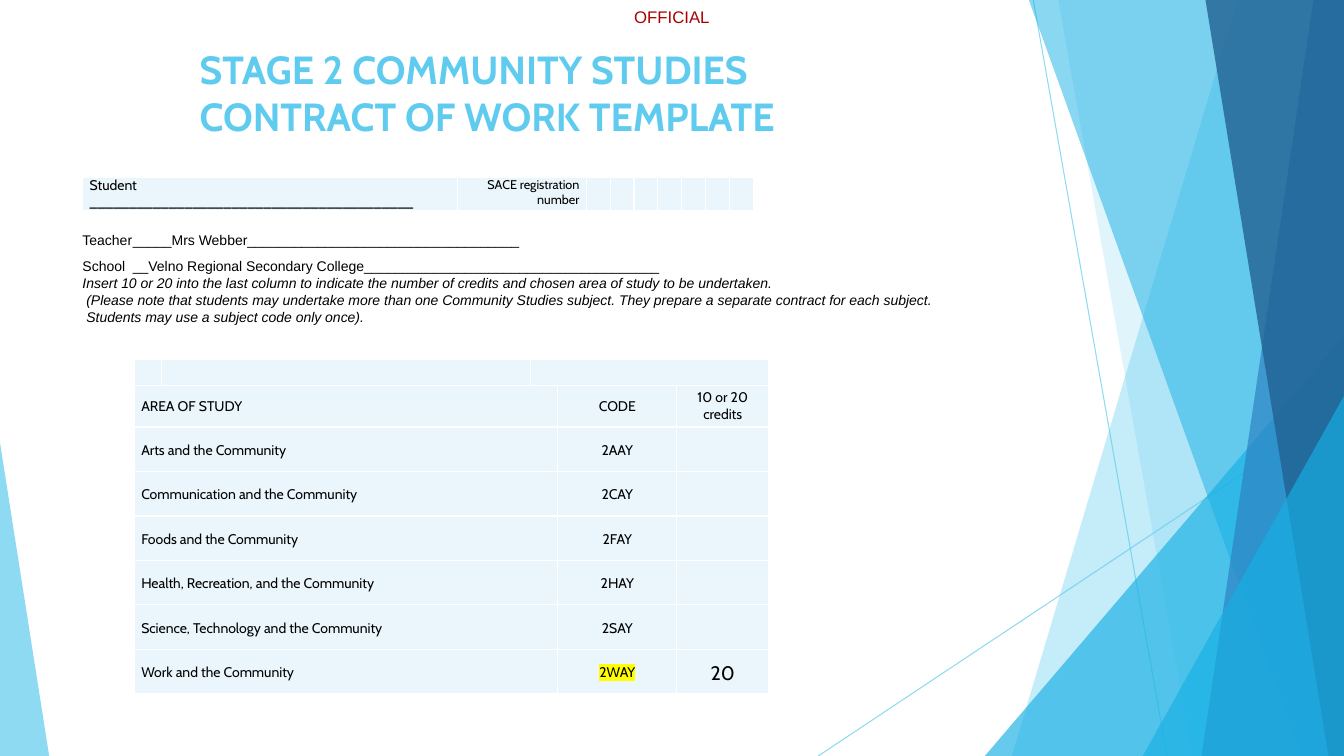
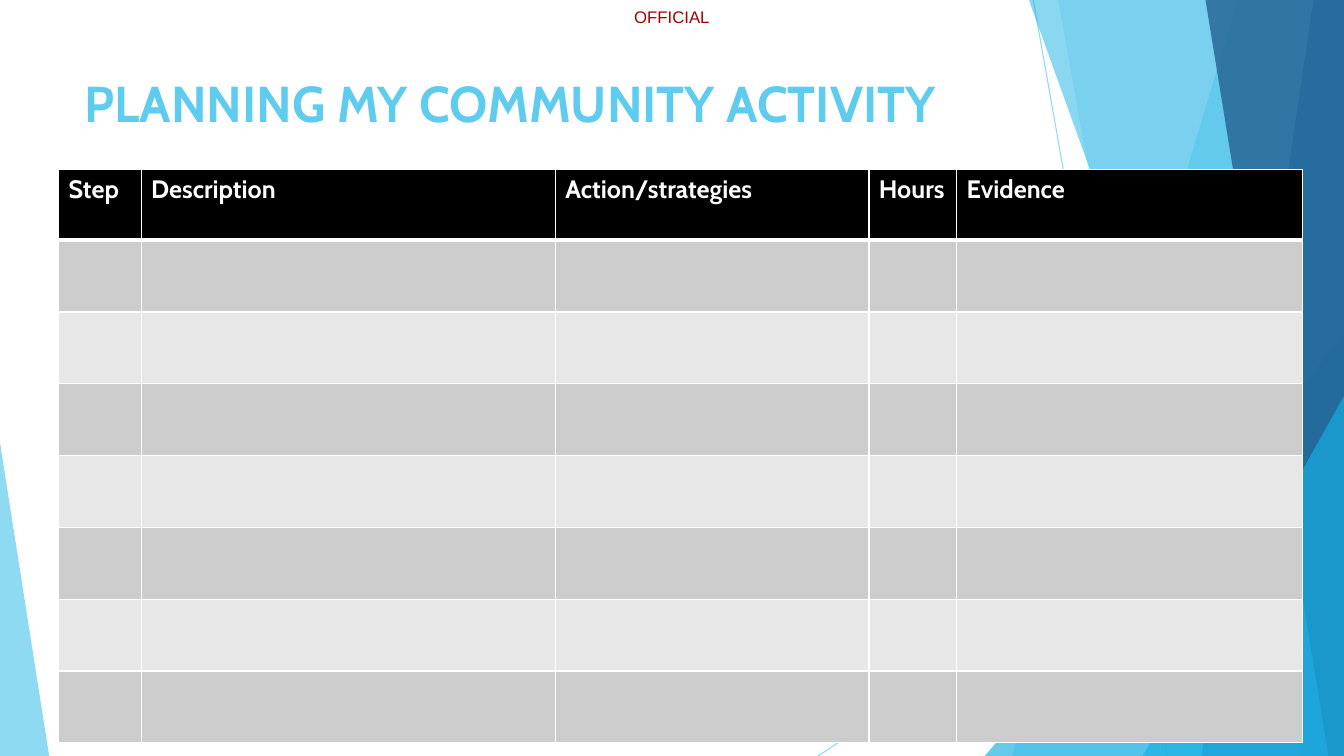
"""Build the two community studies planning slides."""
from dataclasses import dataclass
from typing import Any, NamedTuple, Sequence

from lxml.etree import SubElement
from pptx import Presentation
from pptx.dml.color import RGBColor
from pptx.enum.shapes import MSO_CONNECTOR, MSO_SHAPE
from pptx.enum.text import MSO_ANCHOR, PP_ALIGN
from pptx.oxml.ns import qn
from pptx.util import Cm, Pt


@dataclass(frozen=True)
class Theme:
    sky: str = "5FCBEF"
    cyan: str = "17B0E4"
    blue: str = "2E83C3"
    navy: str = "226292"
    marking: str = "A80000"
    pale: str = "EAF6FC"
    black: str = "000000"
    white: str = "FFFFFF"
    yellow: str = "FFFF00"
    gray: str = "CCCCCC"
    light_gray: str = "E7E7E7"
    head_font: str = "Cabin"
    body_font: str = "Arial"
    title: int = 36
    long_title: int = 28
    header: int = 18
    credit: int = 14
    label: int = 12
    body: int = 10
    small: int = 9


T = Theme()
WIDTH, HEIGHT = 33.87, 19.05


class Style(NamedTuple):
    font: str
    size: int
    color: str
    bold: bool = False
    italic: bool = False


CELL = Style(T.head_font, T.body, T.black)
HEADER = Style(T.head_font, T.header, T.white, bold=True)
NOTE = Style(T.body_font, T.body, T.black)
HINT = NOTE._replace(italic=True)


class Box(NamedTuple):
    x: float
    y: float
    w: float
    h: float


class Line(NamedTuple):
    text: str
    style: Style
    fmt: dict[str, Any] = {}
    highlight: str = ""


class Band(NamedTuple):
    top_x: float
    bottom_x: float
    color: str
    alpha: int


class Wedge(NamedTuple):
    box: Box
    apex: float
    color: str
    alpha: int


class Ray(NamedTuple):
    x1: float
    y1: float
    x2: float
    y2: float


@dataclass(frozen=True)
class Grid:
    x: float
    y: float
    cols: Sequence[float]
    rows: Sequence[float]
    fills: Sequence[str]
    inset_x: float = 0.18
    inset_y: float = 0
    anchor: MSO_ANCHOR = MSO_ANCHOR.MIDDLE
    empty_size: int = T.body
    header_rule: float = 1


RAYS = [Ray(26.04, 0, 29.41, HEIGHT), Ray(WIDTH, 10.24, 20.62, HEIGHT)]
FACETS = [
    Band(31.19, 25.5, T.sky, 36),
    Band(26.67, 30.05, T.sky, 20),
    Wedge(Box(24.82, 8.46, 9.05, 10.59), 1, T.cyan, 66),
    Band(25.93, 32.79, T.cyan, 50),
    Band(33.1, 30.28, T.blue, 70),
    Band(30.38, 33.48, T.navy, 80),
    Wedge(Box(28.8, 9.98, 5.07, 9.07), 1, T.cyan, 66),
    Wedge(Box(0, 11.15, 1.24, 7.9), 0, T.sky, 70),
]


def rgb(color: str) -> RGBColor:
    return RGBColor.from_string(color)


def apply(obj: Any, fmt: dict[str, Any]) -> None:
    for name, value in fmt.items():
        setattr(obj, name, value)


def set_alpha(sp: Any, alpha: int) -> None:
    color = sp._element.spPr.find(".//" + qn("a:srgbClr"))
    SubElement(color, qn("a:alpha"), val=str(alpha * 1000))


def write(tf: Any, lines: Sequence[Line]) -> None:
    for i, line in enumerate(lines):
        p = tf.add_paragraph() if i else tf.paragraphs[0]
        apply(p, line.fmt)
        r = p.add_run()
        r.text = line.text
        style = line.style
        apply(r.font, {"name": style.font, "size": Pt(style.size),
                       "bold": style.bold, "italic": style.italic})
        r.font.color.rgb = rgb(style.color)
        if line.highlight:
            r_pr = r._r.get_or_add_rPr()
            mark = SubElement(r_pr, qn("a:highlight"))
            SubElement(mark, qn("a:srgbClr"), val=line.highlight)
            r_pr.find(qn("a:latin")).addprevious(mark)


def add_text(s: Any, box: Box, lines: Sequence[Line], **fmt: Any) -> None:
    tf = s.shapes.add_textbox(*map(Cm, box)).text_frame
    apply(tf, {"word_wrap": True, **fmt})
    write(tf, lines)


def add_title(s: Any, box: Box, size: int, *texts: str) -> None:
    style = Style(T.head_font, size, T.sky, bold=True)
    add_text(s, box, [Line(text, style) for text in texts])


def add_ray(s: Any, ray: Ray) -> None:
    sp = s.shapes.add_connector(MSO_CONNECTOR.STRAIGHT, *map(Cm, ray))
    sp.line.color.rgb = rgb(T.sky)
    sp.line.width = Pt(0.75)
    set_alpha(sp, 70)
    SubElement(sp._element.spPr, qn("a:effectLst"))


def add_facet(s: Any, facet: Band | Wedge) -> None:
    if isinstance(facet, Band):
        fb = s.shapes.build_freeform(Cm(facet.top_x), 0)
        corners = [(WIDTH, 0), (WIDTH, HEIGHT), (facet.bottom_x, HEIGHT)]
        fb.add_line_segments([(Cm(x), Cm(y)) for x, y in corners])
        sp = fb.convert_to_shape()
    else:
        sp = s.shapes.add_shape(MSO_SHAPE.ISOSCELES_TRIANGLE, *map(Cm, facet.box))
        sp.adjustments[0] = facet.apex
    sp.shadow.inherit = False
    sp.fill.solid()
    sp.fill.fore_color.rgb = rgb(facet.color)
    set_alpha(sp, facet.alpha)
    sp.line.fill.background()


def add_slide(prs: Any) -> Any:
    s = prs.slides.add_slide(prs.slide_layouts[6])
    for ray in RAYS:
        add_ray(s, ray)
    for facet in FACETS:
        add_facet(s, facet)
    add_text(s, Box(15.98, 0.18, 2.03, 0.5),
             [Line("OFFICIAL", Style(T.body_font, T.label, T.marking))],
             margin_left=0, margin_right=0, margin_top=0, margin_bottom=0)
    return s


def set_borders(cell: Any, top: float, bottom: float) -> None:
    tc_pr = cell._tc.get_or_add_tcPr()
    for side, width in {"L": 1, "R": 1, "T": top, "B": bottom}.items():
        ln = SubElement(tc_pr, qn(f"a:ln{side}"), w=str(Pt(width)))
        fill = SubElement(ln, qn("a:solidFill"))
        SubElement(fill, qn("a:srgbClr"), val=T.white)


def add_grid(s: Any, grid: Grid, texts: dict[tuple[int, int], list[Line]]) -> Any:
    size = Box(grid.x, grid.y, sum(grid.cols), sum(grid.rows))
    table = s.shapes.add_table(len(grid.rows), len(grid.cols), *map(Cm, size)).table
    apply(table, {"first_row": False, "horz_banding": False})
    for col, width in zip(table.columns, grid.cols):
        col.width = Cm(width)
    for i, height in enumerate(grid.rows):
        table.rows[i].height = Cm(height)
        for j in range(len(grid.cols)):
            cell = table.cell(i, j)
            apply(cell, {"margin_left": Cm(grid.inset_x), "margin_right": Cm(grid.inset_x),
                         "margin_top": Cm(grid.inset_y), "margin_bottom": Cm(grid.inset_y),
                         "vertical_anchor": grid.anchor})
            set_borders(cell, grid.header_rule if i == 1 else 1,
                        grid.header_rule if i == 0 else 1)
            cell.fill.solid()
            cell.fill.fore_color.rgb = rgb(grid.fills[i])
            if (i, j) in texts:
                write(cell.text_frame, texts[i, j])
            else:
                SubElement(cell.text_frame.paragraphs[0]._p, qn("a:endParaRPr"),
                           sz=str(grid.empty_size * 100))
    return table


def add_student_row(s: Any) -> None:
    grid = Grid(2.08, 4.47, [9.45, 3.25] + [0.6] * 7, [0.84], [T.pale],
                anchor=MSO_ANCHOR.TOP)
    before = {"space_before": Pt(6)}
    add_grid(s, grid, {
        (0, 0): [Line("Student " + "_" * 41, CELL, before)],
        (0, 1): [Line("SACE registration number", CELL._replace(size=T.small),
                      {**before, "alignment": PP_ALIGN.RIGHT})],
    })


def add_area_table(s: Any) -> None:
    areas = [
        ("Arts and the Community", "2AAY"),
        ("Communication and the Community", "2CAY"),
        ("Foods and the Community", "2FAY"),
        ("Health, Recreation, and the Community", "2HAY"),
        ("Science, Technology and the Community", "2SAY"),
        ("Work and the Community", "2WAY"),
    ]
    chosen = "2WAY"
    center = {"alignment": PP_ALIGN.CENTER}
    spaced = {"line_spacing": 1.15}
    texts = {
        (1, 0): [Line("AREA OF STUDY", CELL)],
        (1, 3): [Line("CODE", CELL, center)],
        (1, 4): [Line(text, CELL, center) for text in ("10 or 20", "credits")],
    }
    for i, (area, code) in enumerate(areas, 2):
        texts[i, 0] = [Line(area, CELL, spaced)]
        texts[i, 3] = [Line(code, CELL, {**center, **spaced},
                            T.yellow if code == chosen else "")]
        if code == chosen:
            texts[i, 4] = [Line("20", CELL._replace(size=T.credit), {**center, **spaced})]
    rows = [0.65, 1.05] + [1.12] * len(areas)
    grid = Grid(3.38, 9.06, [0.69, 9.3, 0.69, 3, 2.31], rows, [T.pale] * len(rows))
    table = add_grid(s, grid, texts)
    table.cell(0, 2).merge(table.cell(0, 4))
    for i in range(1, len(rows)):
        table.cell(i, 0).merge(table.cell(i, 2))


def add_contract(prs: Any) -> None:
    s = add_slide(prs)
    add_title(s, Box(4.78, 1.02, 29, 3.33), T.long_title,
              "STAGE 2 COMMUNITY STUDIES", "CONTRACT OF WORK TEMPLATE")
    add_student_row(s)
    add_area_table(s)
    add_text(s, Box(1.83, 5.7, 23.7, 3.3), [
        Line("Teacher\t_____Mrs Webber" + "_" * 35, NOTE, {"space_after": Pt(7)}),
        Line("School\t__Velno Regional Secondary College" + "_" * 38, NOTE),
        Line("Insert 10 or 20 into the last column to indicate the number of credits "
             "and chosen area of study to be undertaken.", HINT),
        Line(" (Please note that students may undertake more than one Community Studies "
             "subject. They prepare a separate contract for each subject.", HINT),
        Line(" Students may use a subject code only once).", HINT),
    ])


def add_planning(prs: Any) -> None:
    s = add_slide(prs)
    add_title(s, Box(1.88, 1.7, 23.88, 3.66), T.title, "PLANNING MY COMMUNITY ACTIVITY")
    heads = ["Step", "Description", "Action/strategies", "Hours", "Evidence"]
    fills = [T.black] + [T.light_gray if i % 2 else T.gray for i in range(7)]
    grid = Grid(1.48, 4.27, [2.08, 10.44, 7.9, 2.21, 8.71], [1.78] + [1.81] * 7, fills,
                inset_x=0.25, inset_y=0.13, anchor=MSO_ANCHOR.TOP,
                empty_size=T.header, header_rule=3)
    add_grid(s, grid, {(0, j): [Line(head, HEADER)] for j, head in enumerate(heads)})


def main() -> None:
    prs = Presentation()
    apply(prs, {"slide_width": Cm(WIDTH), "slide_height": Cm(HEIGHT)})
    add_contract(prs)
    add_planning(prs)
    prs.save("out.pptx")


if __name__ == "__main__":
    main()
